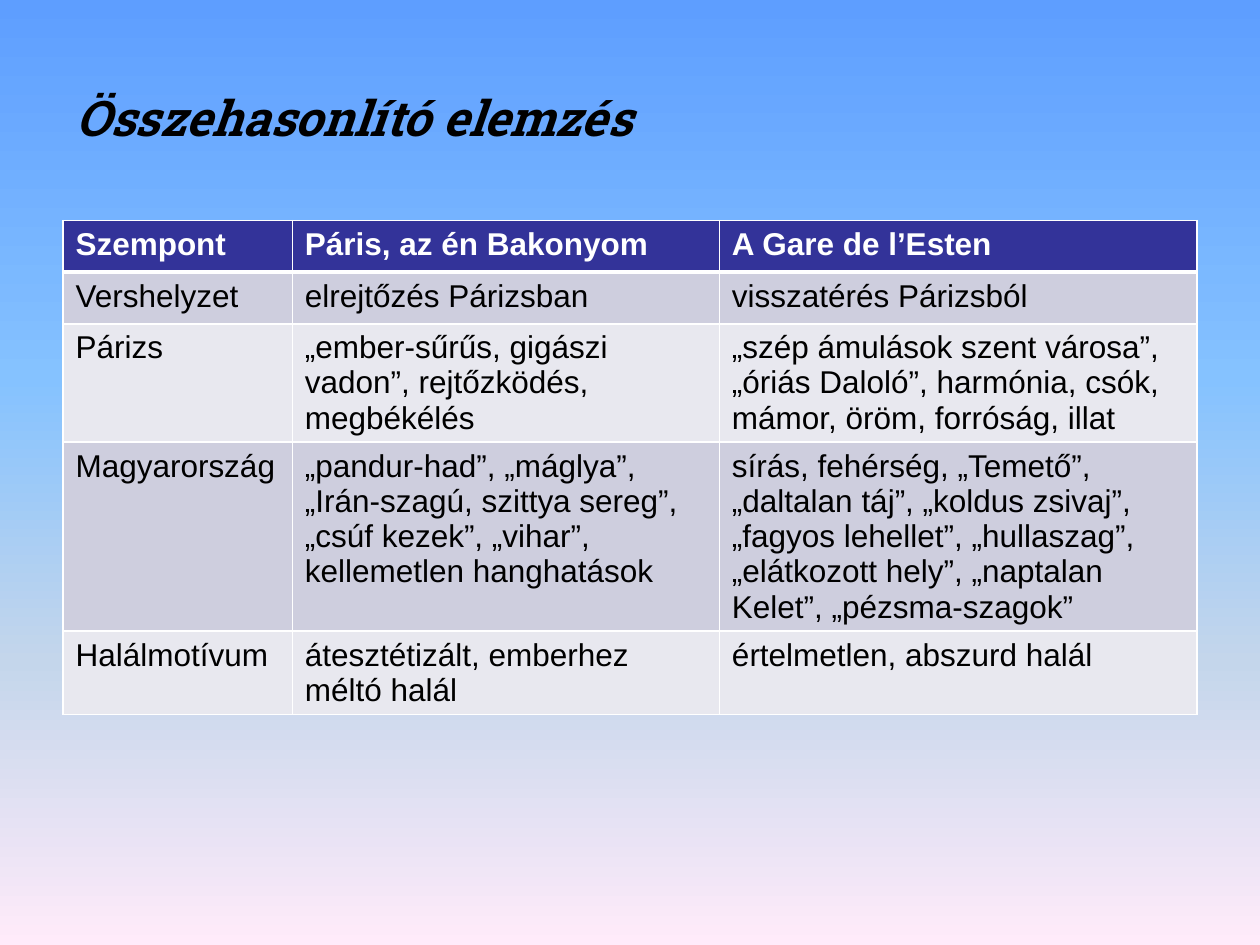
from lxml import etree
from pptx import Presentation
from pptx import util as u
from pptx.dml import color
from pptx.enum import text
from pptx.oxml import ns

GRADIENT = [(0, "5E9EFF"), (40, "85C2FF"), (70, "C4D6EB"), (100, "FFEBFA")]
COLUMN_WIDTHS = [1.82, 3.39, 3.79]
ROW_HEIGHT = 0.41
ROWS = [
    ["Szempont", "Páris, az én Bakonyom", "A Gare de l’Esten"],
    ["Vershelyzet", "elrejtőzés Párizsban", "visszatérés Párizsból"],
    ["Párizs",
     "„ember-sűrűs, gigászi vadon”, rejtőzködés, megbékélés",
     "„szép ámulások szent városa”, „óriás Daloló”, harmónia, csók, "
     "mámor, öröm, forróság, illat"],
    ["Magyarország",
     "„pandur-had”, „máglya”, „Irán-szagú, szittya sereg”, "
     "„csúf kezek”, „vihar”, kellemetlen hanghatások",
     "sírás, fehérség, „Temető”, „daltalan táj”, „koldus zsivaj”, "
     "„fagyos lehellet”, „hullaszag”, „elátkozott hely”, "
     "„naptalan Kelet”, „pézsma-szagok”"],
    ["Halálmotívum", "átesztétizált, emberhez méltó halál",
     "értelmetlen, abszurd halál"],
]


def rgb(value):
    return color.RGBColor.from_string(value)


def add_color(parent, value):
    etree.SubElement(parent, ns.qn("a:srgbClr"), val=value)


class SlideBuilder:
    black, white = "000000", "FFFFFF"
    header_fill, band_fills = "333399", ["E8E8EF", "CECEDE"]
    title_font, body_font = "Roboto Slab", "Arial"

    def __init__(self, deck):
        self.page = deck.slides.add_slide(deck.slide_layouts[5])

    def background(self, stops):
        fill = self.page.background.fill
        fill.gradient()
        fill.gradient_angle = 270  # counter-clockwise: top to bottom
        stop_list = self.page.element.find(".//" + ns.qn("a:gsLst"))
        stop_list.clear()
        for percent, value in stops:
            stop = etree.SubElement(stop_list, ns.qn("a:gs"), pos=str(percent * 1000))
            add_color(stop, value)

    def format(self, para, name, size, value, bold=False, italic=False):
        font = para.font
        font.name, font.size = name, u.Pt(size)
        font.bold, font.italic = bold, italic
        font.color.rgb = rgb(value)

    def title(self, words, left, top, width, height):
        box = self.page.shapes.title
        box.left, box.top = u.Inches(left), u.Inches(top)
        box.width, box.height = u.Inches(width), u.Inches(height)
        frame = box.text_frame
        frame.text = words
        frame.vertical_anchor = text.MSO_ANCHOR.MIDDLE
        para = frame.paragraphs[0]
        para.alignment = text.PP_ALIGN.LEFT
        self.format(para, self.title_font, 28, self.black, bold=True, italic=True)

    def borders(self, cell, widths):
        properties = cell._tc.get_or_add_tcPr()
        for side, width in widths.items():
            line = etree.SubElement(properties, ns.qn("a:ln" + side), w=str(u.Pt(width)))
            add_color(etree.SubElement(line, ns.qn("a:solidFill")), self.white)

    def table(self, rows, column_widths, row_height, left, top):
        table = self.page.shapes.add_table(
            len(rows), len(column_widths), u.Inches(left), u.Inches(top),
            u.Inches(sum(column_widths)), u.Inches(row_height * len(rows))).table
        for column, width in zip(table.columns, column_widths):
            column.width = u.Inches(width)
        for r, row in enumerate(rows):
            header = r == 0
            for c, words in enumerate(row):
                cell = table.cell(r, c)
                cell.text = words
                self.format(cell.text_frame.paragraphs[0], self.body_font, 18,
                            self.white if header else self.black, bold=header)
                # Borders come before the fill in the cell properties
                self.borders(cell, {"L": 1, "R": 1, "T": 3 if r == 1 else 1,
                                    "B": 3 if header else 1})
                cell.fill.solid()
                cell.fill.fore_color.rgb = rgb(
                    self.header_fill if header else self.band_fills[r % 2])


def main():
    deck = Presentation()
    deck.slide_width, deck.slide_height = u.Inches(10), u.Inches(7.5)
    slide = SlideBuilder(deck)

    # Background and title
    slide.background(GRADIENT)
    slide.title("Összehasonlító elemzés", 0.5, 0.3, 9, 1.25)

    # Comparison of the two poems
    slide.table(ROWS, COLUMN_WIDTHS, ROW_HEIGHT, 0.5, 1.75)

    deck.save("out.pptx")


if __name__ == "__main__":
    main()
